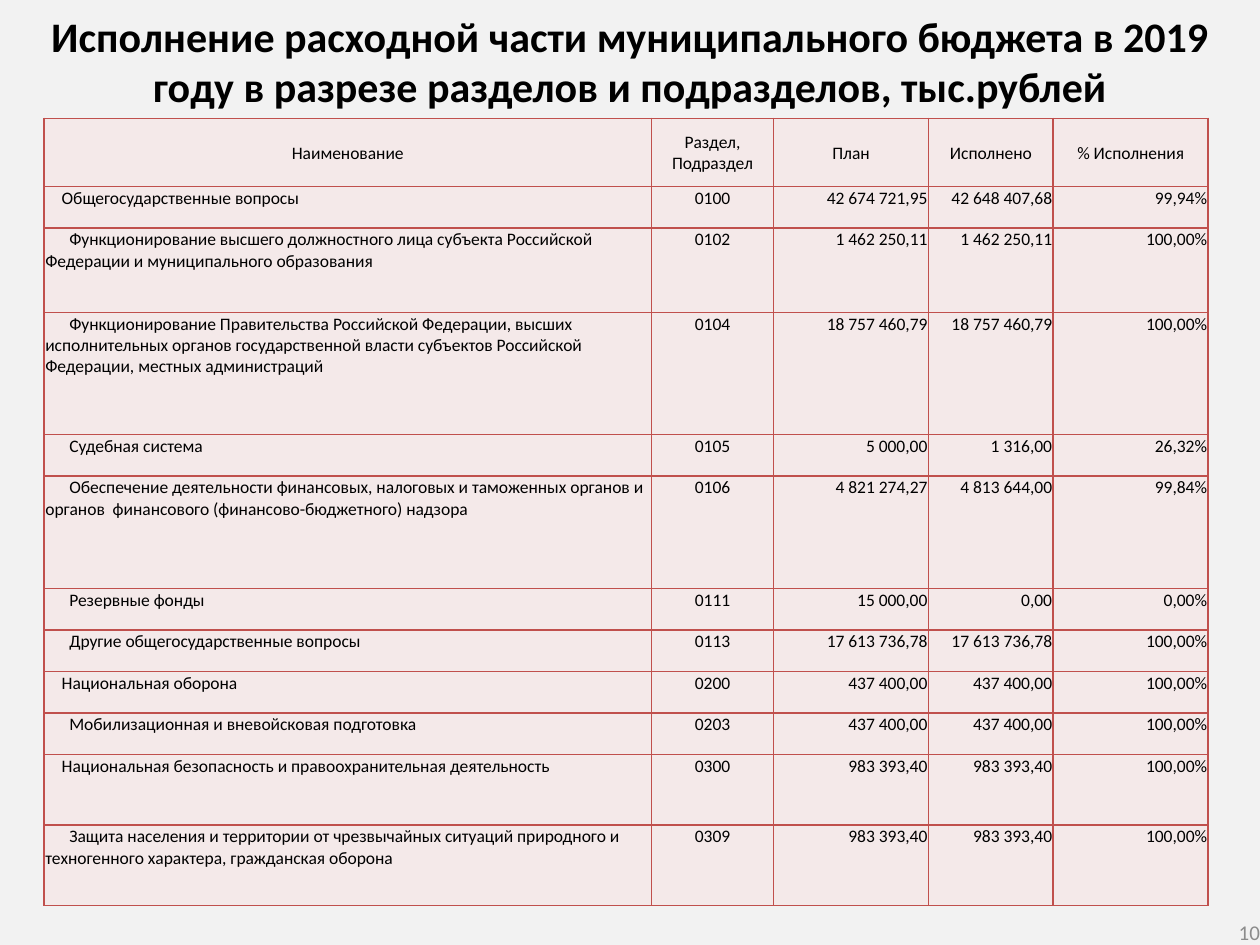
from lxml.etree import SubElement
from pptx import Presentation
from pptx.dml.color import RGBColor
from pptx.enum.text import MSO_ANCHOR, PP_ALIGN
from pptx.oxml.ns import qn
from pptx.util import Inches, Pt

TITLE = "Исполнение расходной части муниципального бюджета в 2019 году в разрезе разделов и подразделов, тыс.рублей"
PAGE = "10"
HEAD = ("Наименование", "Раздел, Подраздел", "План", "Исполнено", "% Исполнения")
ROWS = [
    (0.33, "Общегосударственные вопросы", "0100", "42 674 721,95", "42 648 407,68", "99,94%"),
    (0.67, "Функционирование высшего должностного лица субъекта Российской Федерации и муниципального образования",
     "0102", "1 462 250,11", "1 462 250,11", "100,00%"),
    (0.97, "Функционирование Правительства Российской Федерации, высших исполнительных органов "
     "государственной власти субъектов Российской Федерации, местных администраций",
     "0104", "18 757 460,79", "18 757 460,79", "100,00%"),
    (0.33, "Судебная система", "0105", "5 000,00", "1 316,00", "26,32%"),
    (0.89, "Обеспечение деятельности финансовых, налоговых и таможенных органов и "
     "органов  финансового (финансово-бюджетного) надзора",
     "0106", "4 821 274,27", "4 813 644,00", "99,84%"),
    (0.33, "Резервные фонды", "0111", "15 000,00", "0,00", "0,00%"),
    (0.33, "Другие общегосударственные вопросы", "0113", "17 613 736,78", "17 613 736,78", "100,00%"),
    (0.33, "Национальная оборона", "0200", "437 400,00", "437 400,00", "100,00%"),
    (0.33, "Мобилизационная и вневойсковая подготовка", "0203", "437 400,00", "437 400,00", "100,00%"),
    (0.56, "Национальная безопасность и правоохранительная деятельность",
     "0300", "983 393,40", "983 393,40", "100,00%"),
    (0.64, "Защита населения и территории от чрезвычайных ситуаций природного и "
     "техногенного характера, гражданская оборона",
     "0309", "983 393,40", "983 393,40", "100,00%"),
]
WIDTHS = (4.82, 0.97, 1.23, 0.99, 1.23)
HEAD_H = 0.54
ALIGNS = (PP_ALIGN.LEFT, PP_ALIGN.CENTER) + (PP_ALIGN.RIGHT,) * 3


def paint(fill, color):
    fill.solid()
    fill.fore_color.rgb = RGBColor.from_string(color)


def inset(box, left, top, right, bottom):
    box.margin_left, box.margin_top = Inches(left), Inches(top)
    box.margin_right, box.margin_bottom = Inches(right), Inches(bottom)


def write(frame, text, size, align, color="000000", bold=False):
    frame.word_wrap = True
    frame.text = text
    para = frame.paragraphs[0]
    para.alignment = align
    font = para.font
    font.name, font.size, font.bold = "Calibri", Pt(size), bold
    font.color.rgb = RGBColor.from_string(color)
    return para


def frame_cell(cell, color):
    props = cell._tc.get_or_add_tcPr()
    for side in ("lnL", "lnR", "lnT", "lnB"):
        line = SubElement(props, qn("a:" + side), w=str(Pt(1)))
        SubElement(SubElement(line, qn("a:solidFill")), qn("a:srgbClr"), val=color)


def fill_cell(cell, text, align, anchor):
    inset(cell, 0.01, 0.01, 0.01, 0)
    cell.vertical_anchor = anchor
    frame_cell(cell, "C0504D")
    paint(cell.fill, "F4E9E9")
    return write(cell.text_frame, text, 10, align)


def add_budget(slide):
    heights = [HEAD_H] + [row[0] for row in ROWS]
    shape = slide.shapes.add_table(
        len(heights), len(WIDTHS), Inches(0.35), Inches(0.94),
        Inches(sum(WIDTHS)), Inches(sum(heights)))
    table = shape.table
    table.first_row = table.horz_banding = False
    for col, width in zip(table.columns, WIDTHS):
        col.width = Inches(width)
    for row, height in zip(table.rows, heights):
        row.height = Inches(height)
    for c, text in enumerate(HEAD):
        fill_cell(table.cell(0, c), text, PP_ALIGN.CENTER, MSO_ANCHOR.MIDDLE)
    for r, (_, *texts) in enumerate(ROWS, 1):
        paras = [fill_cell(table.cell(r, c), text, ALIGNS[c], MSO_ANCHOR.TOP)
                 for c, text in enumerate(texts)]
        indent = 0.13 if texts[1].endswith("00") else 0.19
        paras[0]._p.get_or_add_pPr().set("indent", str(Inches(indent)))


def main():
    deck = Presentation()
    deck.slide_width, deck.slide_height = Inches(10), Inches(7.5)
    slide = deck.slides.add_slide(deck.slide_layouts[5])
    paint(slide.background.fill, "F2F2F2")

    title = slide.shapes.title
    title.left, title.top, title.width, title.height = 0, 0, Inches(10), Inches(0.94)
    frame = title.text_frame
    inset(frame, 0.1, 0.08, 0.1, 0.05)
    frame.vertical_anchor = MSO_ANCHOR.TOP
    write(frame, TITLE, 24, PP_ALIGN.CENTER, bold=True)

    add_budget(slide)

    page = slide.shapes.add_textbox(Inches(7.67), Inches(7.29), Inches(2.33), Inches(0.21))
    inset(page.text_frame, 0, 0, 0, 0)
    page.text_frame.vertical_anchor = MSO_ANCHOR.MIDDLE
    write(page.text_frame, PAGE, 12, PP_ALIGN.RIGHT, "8C8C8C")
    deck.save("out.pptx")


if __name__ == "__main__":
    main()
